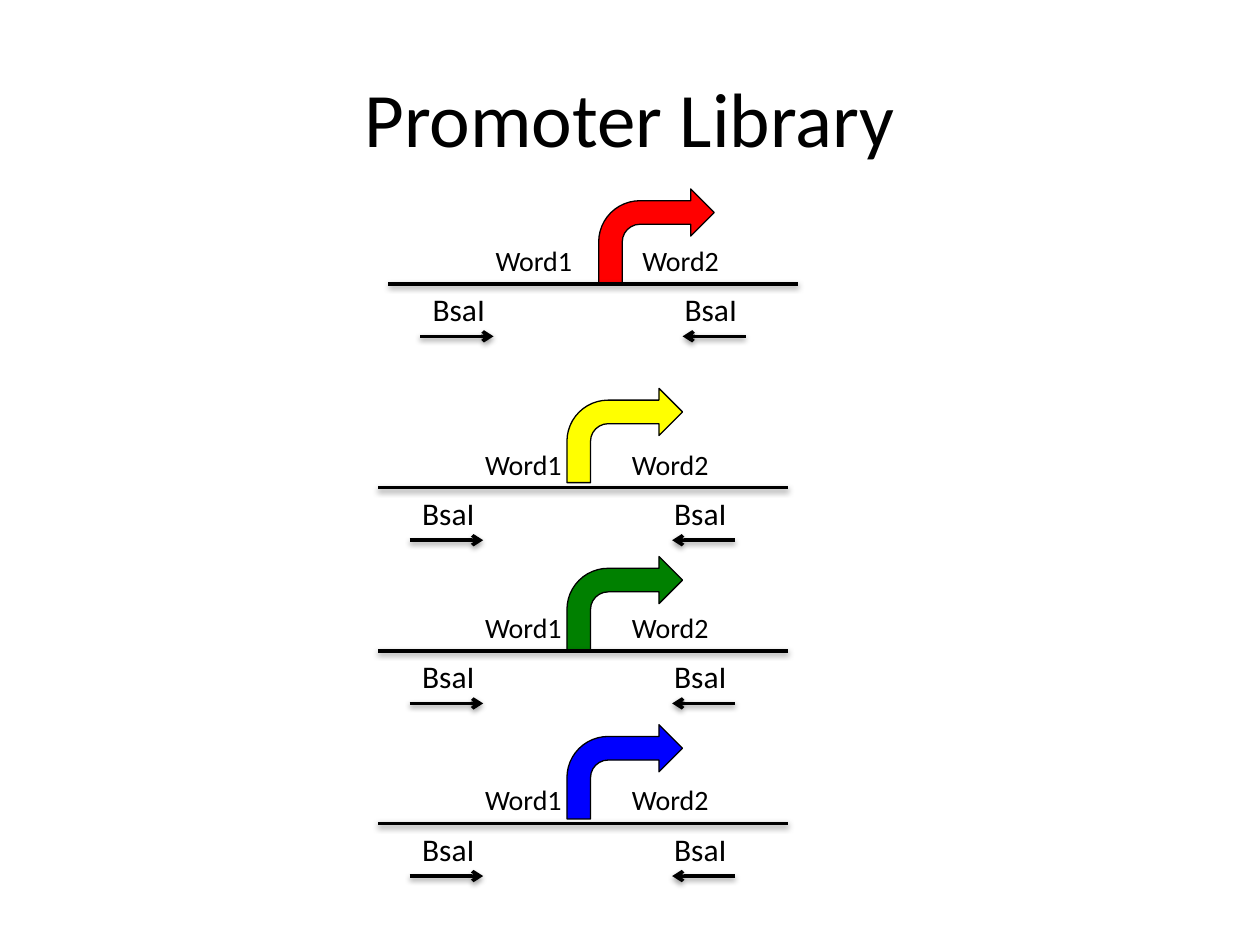
from dataclasses import dataclass

from lxml.etree import SubElement
from pptx import Presentation
from pptx.dml.color import RGBColor
from pptx.enum.shapes import MSO_CONNECTOR, MSO_SHAPE
from pptx.enum.text import MSO_ANCHOR, MSO_AUTO_SIZE, PP_ALIGN
from pptx.oxml.ns import qn
from pptx.shapes.connector import Connector
from pptx.shapes.shapetree import GroupShapes, SlideShapes
from pptx.text.text import TextFrame
from pptx.util import Cm, Pt


@dataclass(frozen=True)
class Theme:
    font: str = "Calibri"
    ink: str = "000000"
    title_size: float = 44
    word_size: float = 16
    site_size: float = 18
    outline: float = 0.75
    strand: float = 2


@dataclass(frozen=True)
class Promoter:
    color: str
    left: float  # start of the DNA strand, cm
    strand_y: float
    arrow_left: float
    arrow_top: float


@dataclass(frozen=True)
class Site:
    label_x: float  # offsets from the start of the strand, cm
    tail_x: float
    head_x: float


THEME = Theme()
PROMOTERS = [
    Promoter("FF0000", 7.83, 5.72, 12.07, 3.81),
    Promoter("FFFF00", 7.62, 9.83, 11.43, 7.83),
    Promoter("008000", 7.62, 13.12, 11.43, 11.22),
    Promoter("0000FF", 7.62, 16.6, 11.43, 14.61),
]
WORDS = {"Word1": 1.91, "Word2": 4.87}
SITES = [Site(0.64, 0.64, 2.12), Site(5.72, 7.2, 5.93)]
STRAND_LENGTH = 8.26
LABEL_WIDTH = 2.54
WORD_HEIGHT = 0.94
SITE_HEIGHT = 1.02
SITE_ARROW_DROP = 1.06


def write(frame: TextFrame, text: str, size: float) -> None:
    span = frame.paragraphs[0].add_run()
    span.text = text
    span.font.name = THEME.font
    span.font.size = Pt(size)
    span.font.color.rgb = RGBColor.from_string(THEME.ink)


def add_label(shapes: SlideShapes | GroupShapes, text: str, size: float,
              left: float, top: float, height: float) -> None:
    box = shapes.add_textbox(Cm(left), Cm(top), Cm(LABEL_WIDTH), Cm(height))
    box.text_frame.word_wrap = True
    box.text_frame.auto_size = MSO_AUTO_SIZE.SHAPE_TO_FIT_TEXT
    write(box.text_frame, text, size)


def add_soft_shadow(line: Connector) -> None:
    effects = SubElement(line._element.spPr, qn("a:effectLst"))
    shadow = SubElement(effects, qn("a:outerShdw"), blurRad="40000",
                        dist="20000", dir="5400000", rotWithShape="0")
    color = SubElement(shadow, qn("a:srgbClr"), val=THEME.ink)
    SubElement(color, qn("a:alpha"), val="38000")


def add_line(shapes: SlideShapes | GroupShapes, start: float, end: float,
             y: float, arrow: bool = False) -> None:
    line = shapes.add_connector(MSO_CONNECTOR.STRAIGHT,
                                Cm(start), Cm(y), Cm(end), Cm(y))
    line.line.color.rgb = RGBColor.from_string(THEME.ink)
    line.line.width = Pt(THEME.strand)
    if arrow:
        SubElement(line.line._get_or_add_ln(), qn("a:tailEnd"), type="arrow")
    add_soft_shadow(line)


def add_bent_arrow(shapes: SlideShapes, promoter: Promoter) -> None:
    arrow = shapes.add_shape(MSO_SHAPE.BENT_ARROW, Cm(promoter.arrow_left),
                             Cm(promoter.arrow_top), Cm(2.33), Cm(1.9))
    arrow.shadow.inherit = False
    arrow.fill.solid()
    arrow.fill.fore_color.rgb = RGBColor.from_string(promoter.color)
    arrow.line.color.rgb = RGBColor.from_string(THEME.ink)
    arrow.line.width = Pt(THEME.outline)


def add_site(shapes: SlideShapes, site: Site, left: float, y: float) -> None:
    group = shapes.add_group_shape()
    add_label(group.shapes, "BsaI", THEME.site_size,
              left + site.label_x, y, SITE_HEIGHT)
    add_line(group.shapes, left + site.tail_x, left + site.head_x,
             y + SITE_ARROW_DROP, arrow=True)


def add_promoter(shapes: SlideShapes, promoter: Promoter) -> None:
    left, y = promoter.left, promoter.strand_y
    add_bent_arrow(shapes, promoter)
    add_line(shapes, left, left + STRAND_LENGTH, y)
    for word, offset in WORDS.items():
        add_label(shapes, word, THEME.word_size,
                  left + offset, y - WORD_HEIGHT, WORD_HEIGHT)
    for site in SITES:
        add_site(shapes, site, left, y)


def add_title(shapes: SlideShapes, text: str) -> None:
    box = shapes.add_textbox(Cm(1.27), Cm(0.76), Cm(22.86), Cm(3.18))
    box.text_frame.word_wrap = True
    box.text_frame.vertical_anchor = MSO_ANCHOR.MIDDLE
    write(box.text_frame, text, THEME.title_size)
    box.text_frame.paragraphs[0].alignment = PP_ALIGN.CENTER


def main() -> None:
    deck = Presentation()
    deck.slide_width, deck.slide_height = Cm(25.4), Cm(19.05)
    page = deck.slides.add_slide(deck.slide_layouts[6])

    # Heading
    add_title(page.shapes, "Promoter Library")

    # One construct per promoter
    for promoter in PROMOTERS:
        add_promoter(page.shapes, promoter)

    deck.save("out.pptx")


if __name__ == "__main__":
    main()
